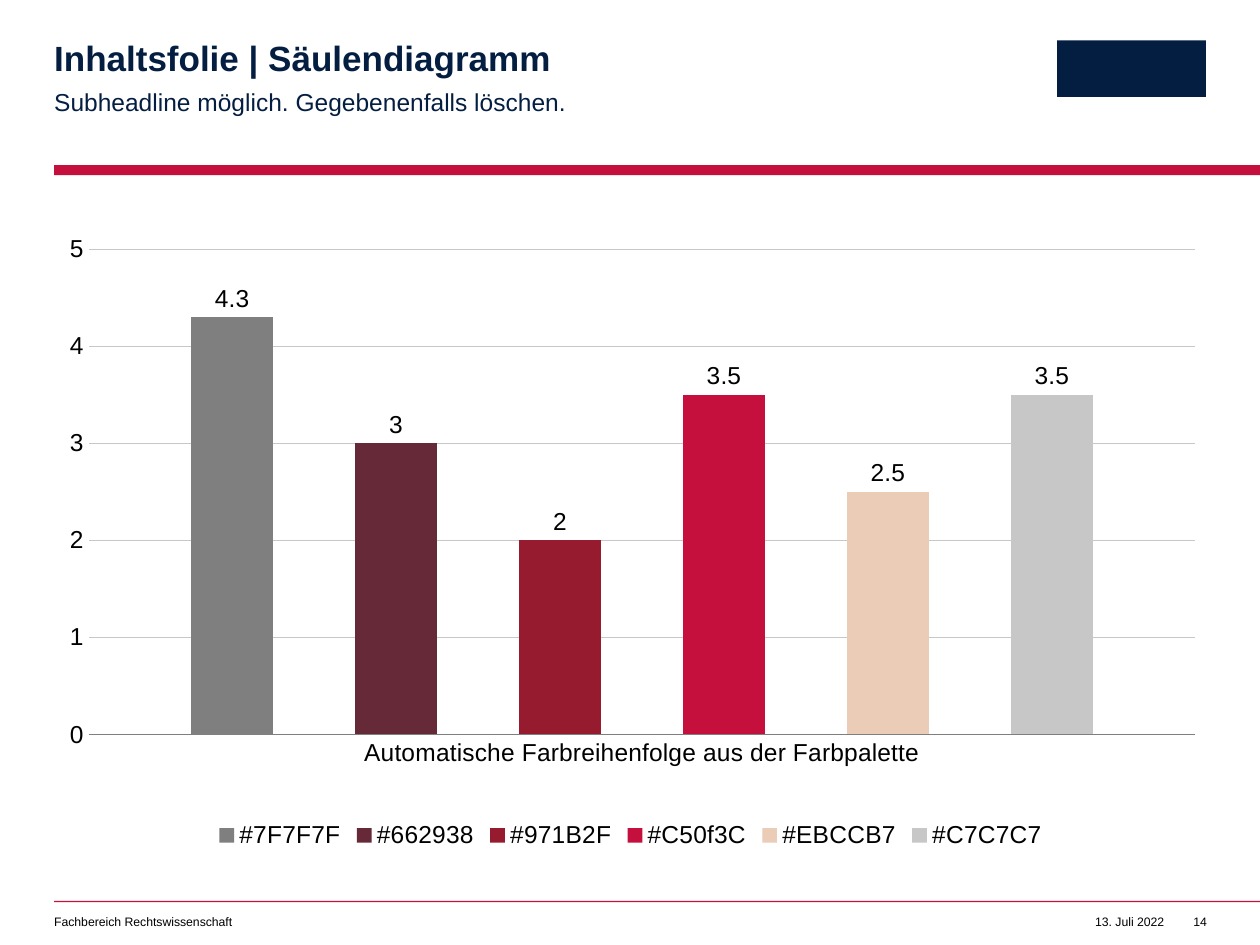
from dataclasses import dataclass

from lxml import etree
from pptx import Presentation
from pptx.chart.data import CategoryChartData
from pptx.dml.color import RGBColor
from pptx.enum.chart import XL_CHART_TYPE, XL_LABEL_POSITION, XL_LEGEND_POSITION, XL_TICK_MARK
from pptx.enum.shapes import MSO_SHAPE
from pptx.enum.text import MSO_ANCHOR, PP_ALIGN
from pptx.oxml import parse_xml
from pptx.oxml.ns import nsdecls, qn
from pptx.util import Inches, Pt

LEFT, RIGHT = PP_ALIGN.LEFT, PP_ALIGN.RIGHT
NO_TICK = XL_TICK_MARK.NONE
OUTSIDE_END = XL_LABEL_POSITION.OUTSIDE_END
LEGEND_BOTTOM = XL_LEGEND_POSITION.BOTTOM
CLUSTERED = XL_CHART_TYPE.COLUMN_CLUSTERED
RECTANGLE = MSO_SHAPE.RECTANGLE
TOP = MSO_ANCHOR.TOP


@dataclass(frozen=True)
class Theme:
    font: str = "Arial"
    navy: str = "041E42"
    red: str = "C50F3C"
    black: str = "000000"
    axis: str = "7F7F7F"
    grid: str = "C7C7C7"
    title: int = 20
    body: int = 14
    footer: int = 7
    hairline: float = 0.5


THEME = Theme()
WIDTH, HEIGHT = 10, 7.5
MARGIN = 0.43
CONTENT_WIDTH = WIDTH - 2 * MARGIN + 0.01
HEADING_WIDTH = 5.61
FOOTER_TOP, FOOTER_HEIGHT = 7.26, 0.12

TITLE = "Inhaltsfolie | Säulendiagramm"
SUBHEADLINE = "Subheadline möglich. Gegebenenfalls löschen."
FOOTER = [
    ("13. Juli 2022", 8.53, 0.71, RIGHT),
    ("Fachbereich Rechtswissenschaft", MARGIN, 4.49, LEFT),
    ("14", 9.38, 0.2, RIGHT),
]
BLOCKS = [
    ((MARGIN, 1.31, WIDTH - MARGIN, 0.08), THEME.red),
    ((MARGIN, 7.15, WIDTH - MARGIN, 0.01), THEME.red),
    ((8.39, 0.32, 1.18, 0.45), THEME.navy),
]
CATEGORY = "Automatische Farbreihenfolge aus der Farbpalette"
COLUMNS = [
    ("#7F7F7F", 4.3),
    ("#662938", 3),
    ("#971B2F", 2),
    ("#C50f3C", 3.5),
    ("#EBCCB7", 2.5),
    ("#C7C7C7", 3.5),
]
PLOT_SHARES = {"x": 0.03, "y": 0.04, "w": 0.96, "h": 0.77}


def rgb(code):
    return RGBColor.from_string(code.lstrip("#").upper())


def place(part, left, top, width, height):
    part.left, part.top = Inches(left), Inches(top)
    part.width, part.height = Inches(width), Inches(height)


def style_font(font, size=THEME.body, color=THEME.black, bold=False):
    font.name, font.size, font.bold = THEME.font, Pt(size), bold
    font.color.rgb = rgb(color)


def write(part, text, size=THEME.body, color=THEME.black, bold=False,
          align=LEFT, wrap=True, spacing=1.0, after=0, right_inset=0):
    frame = part.text_frame
    frame.word_wrap = wrap
    frame.vertical_anchor = TOP
    frame.margin_left = frame.margin_top = frame.margin_bottom = 0
    frame.margin_right = Inches(right_inset)
    paragraph = frame.paragraphs[0]
    paragraph.alignment, paragraph.line_spacing = align, spacing
    paragraph.space_before, paragraph.space_after = Pt(0), Pt(after)
    run = paragraph.add_run()
    run.text = text
    style_font(run.font, size, color, bold)
    return paragraph


def remove_bullet(paragraph):
    properties = paragraph._p.get_or_add_pPr()
    properties.set("marL", "0")
    properties.set("indent", "0")
    etree.SubElement(properties, qn("a:buNone"))


def add_block(slide, box, color):
    block = slide.shapes.add_shape(RECTANGLE, *map(Inches, box))
    block.shadow.inherit = False
    block.fill.solid()
    block.fill.fore_color.rgb = rgb(color)
    block.line.fill.background()


def fix_plot_area(chart):
    plot_area = chart._chartSpace.chart.plotArea
    for layout in plot_area.findall(qn("c:layout")):
        plot_area.remove(layout)
    modes = '<c:layoutTarget val="inner"/><c:xMode val="edge"/><c:yMode val="edge"/>'
    shares = "".join(f'<c:{key} val="{share}"/>' for key, share in PLOT_SHARES.items())
    plot_area.insert(0, parse_xml(
        f'<c:layout {nsdecls("c")}><c:manualLayout>{modes}{shares}</c:manualLayout></c:layout>'))


def add_column_chart(slide):
    data = CategoryChartData()
    data.categories = [CATEGORY]
    for name, value in COLUMNS:
        data.add_series(name, [value])
    box = (MARGIN, 1.78, CONTENT_WIDTH, 5)
    chart = slide.shapes.add_chart(CLUSTERED, *map(Inches, box), data).chart
    chart.has_title = False
    style_font(chart.font)

    chart.has_legend = True
    chart.legend.position = LEGEND_BOTTOM
    chart.legend.include_in_layout = False
    style_font(chart.legend.font)

    for axis in (chart.category_axis, chart.value_axis):
        axis.major_tick_mark = axis.minor_tick_mark = NO_TICK
        style_font(axis.tick_labels.font)
    category_line = chart.category_axis.format.line
    category_line.color.rgb, category_line.width = rgb(THEME.axis), Pt(THEME.hairline)

    values = chart.value_axis
    values.minimum_scale, values.maximum_scale, values.major_unit = 0, 5, 1
    values.format.line.fill.background()
    gridline = values.major_gridlines.format.line
    gridline.color.rgb, gridline.width = rgb(THEME.grid), Pt(THEME.hairline)

    plot = chart.plots[0]
    plot.gap_width, plot.overlap, plot.vary_by_categories = 250, -100, False
    for column, (color, _) in zip(plot.series, COLUMNS):
        column.format.fill.solid()
        column.format.fill.fore_color.rgb = rgb(color)
        labels = column.data_labels
        labels.show_value, labels.position = True, OUTSIDE_END
        style_font(labels.font)
    fix_plot_area(chart)


def main():
    deck = Presentation()
    deck.slide_width, deck.slide_height = Inches(WIDTH), Inches(HEIGHT)
    slide = deck.slides.add_slide(deck.slide_layouts[1])

    for box, color in BLOCKS:
        add_block(slide, box, color)

    for text, left, width, align in FOOTER:
        box = (left, FOOTER_TOP, width, FOOTER_HEIGHT)
        footer = slide.shapes.add_textbox(*map(Inches, box))
        write(footer, text, size=THEME.footer, align=align, wrap=align == LEFT)

    headline, subheadline = slide.shapes.title, slide.placeholders[1]
    place(headline, MARGIN, 0.33, HEADING_WIDTH, 0.3)
    write(headline, TITLE, size=THEME.title, color=THEME.navy, bold=True, spacing=0.9)
    place(subheadline, MARGIN, 0.67, HEADING_WIDTH, 0.24)
    remove_bullet(write(subheadline, SUBHEADLINE, color=THEME.navy,
                        spacing=1.1, after=8, right_inset=0.39))

    add_column_chart(slide)
    deck.save("out.pptx")


if __name__ == "__main__":
    main()
